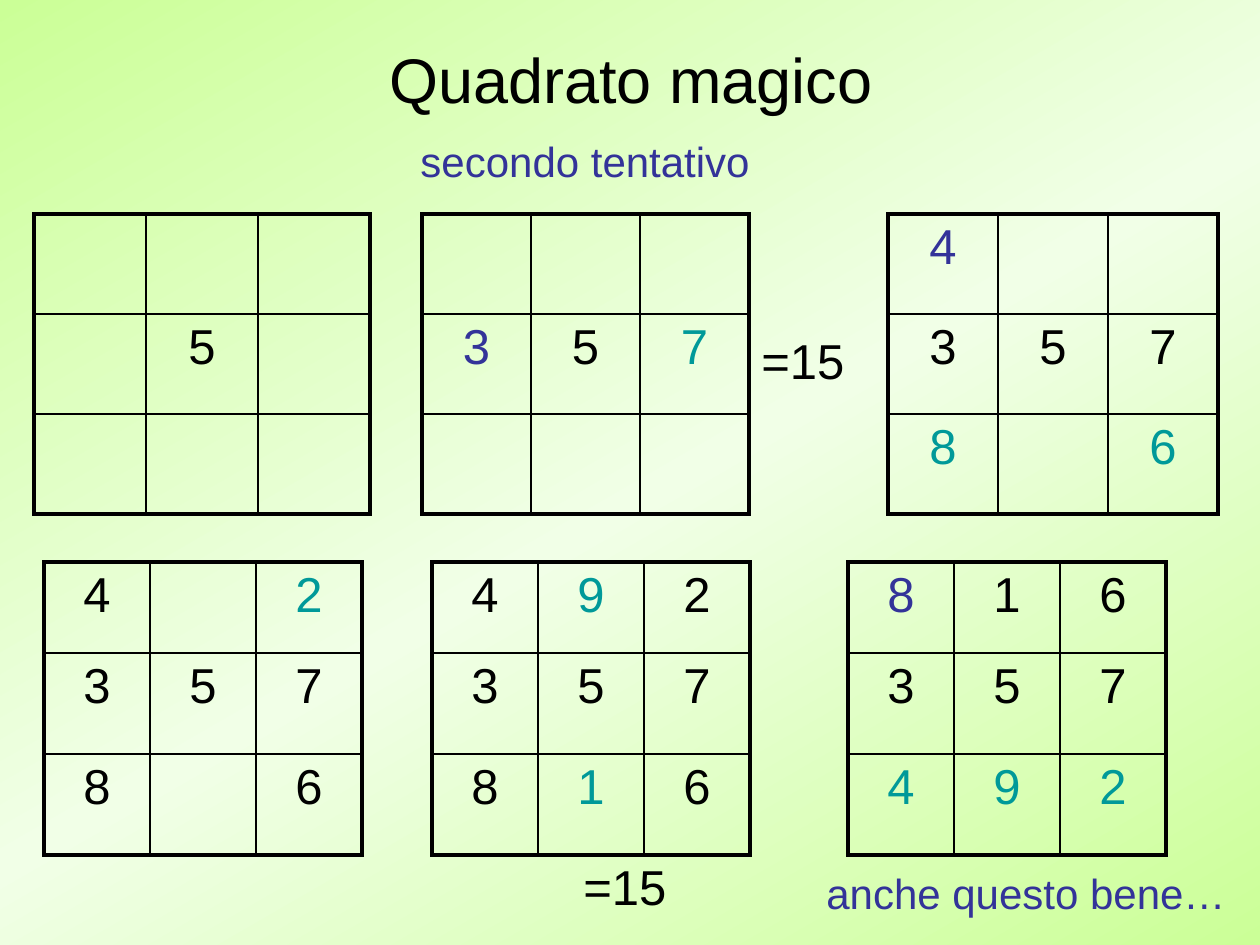
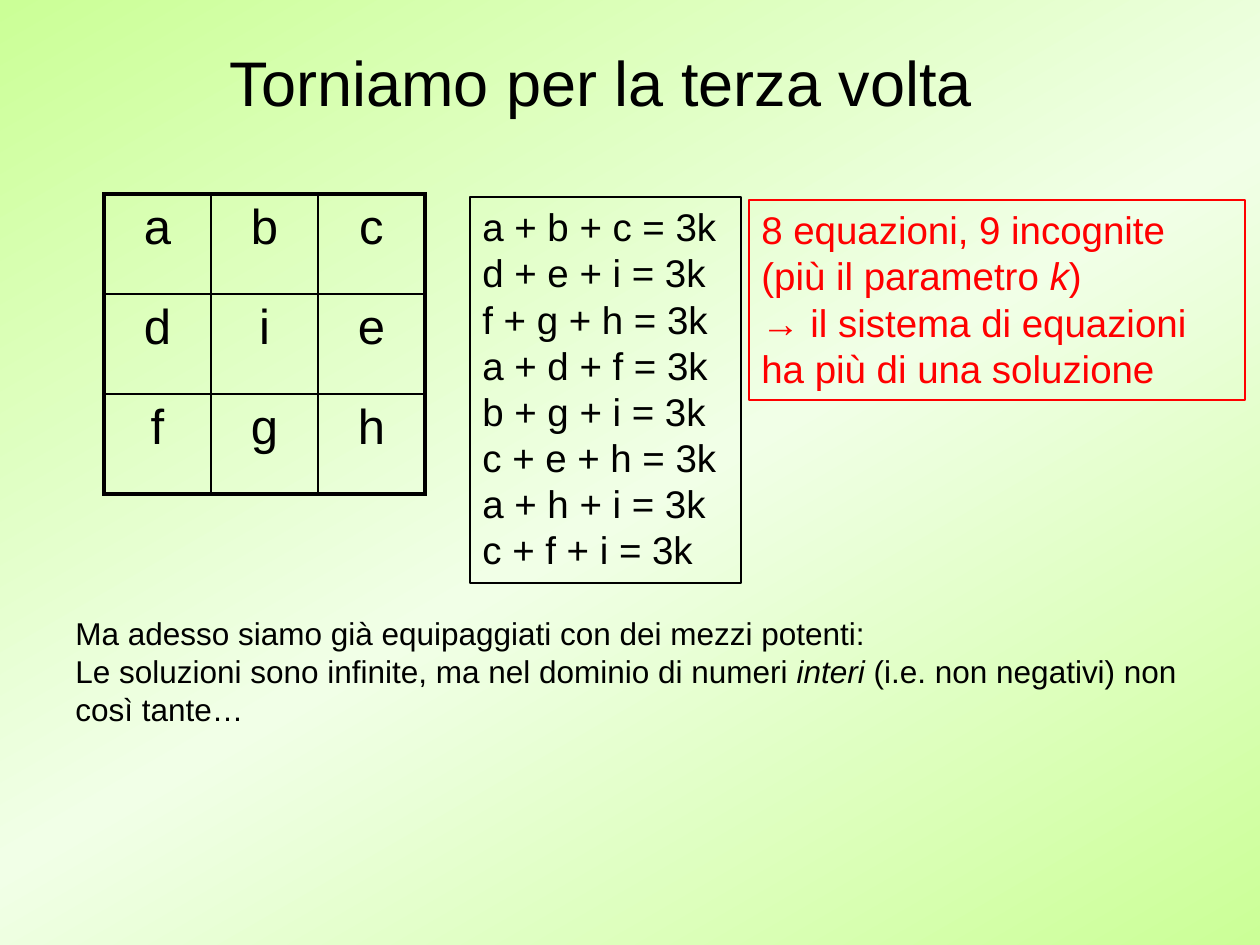
from copy import deepcopy

from lxml.etree import SubElement
from pptx import Presentation
from pptx.dml.color import RGBColor
from pptx.enum.shapes import MSO_SHAPE
from pptx.enum.text import MSO_ANCHOR, MSO_AUTO_SIZE, PP_ALIGN
from pptx.oxml.ns import qn
from pptx.util import Emu, Pt

SCALE = 914400 / 126
WIDTH, HEIGHT = 1260, 945
FONT = "Arial"
LIME = RGBColor(0xCB, 0xFF, 0x97)
PALE = RGBColor(0xF1, 0xFF, 0xE7)
BLACK = RGBColor(0, 0, 0)
BLUE = RGBColor(0x33, 0x33, 0x99)
TEAL = RGBColor(0, 0x99, 0x99)
RED = RGBColor(0xFF, 0, 0)
MARKS = {"b": BLUE, "t": TEAL}
THICK, THIN = Pt(2.25), Pt(1)
EVEN = (100, 100, 100)
SHORT = (91, 101, 101)


def px(count):
    return Emu(round(count * SCALE))


def place(shape, left, top, width, height):
    shape.left, shape.top = px(left), px(top)
    shape.width, shape.height = px(width), px(height)


def paint_back(master):
    fill = master.background.fill
    fill.gradient()
    fill.gradient_angle = 120
    first = fill.gradient_stops[0]._gs
    first.addnext(deepcopy(first))
    looks = ((0, LIME), (0.48, PALE), (1, LIME))
    for stop, (spot, color) in zip(fill.gradient_stops, looks):
        stop.position = spot
        stop.color.rgb = color


def write(para, text, size, color):
    """Add the text run by run; parts between asterisks are italic."""
    for index, part in enumerate(text.split("*")):
        if part:
            run = para.add_run()
            run.text = part
            font = run.font
            font.name, font.size = FONT, Pt(size)
            font.italic = index % 2 == 1
            font.color.rgb = color


def add_page(deck, title, left, top):
    slide = deck.slides.add_slide(deck.slide_layouts[5])
    head = slide.shapes.title
    place(head, left, top, 1134, 157)
    frame = head.text_frame
    frame.auto_size = MSO_AUTO_SIZE.NONE
    frame.vertical_anchor = MSO_ANCHOR.MIDDLE
    para = frame.paragraphs[0]
    para.alignment = PP_ALIGN.CENTER
    write(para, title, 36, BLACK)
    return slide


def add_text(slide, area, lines, size, color=BLACK, wrap=False, framed=False):
    if framed:
        box = slide.shapes.add_shape(MSO_SHAPE.RECTANGLE, *map(px, area))
        box.shadow.inherit = False
        box.fill.background()
        box.line.color.rgb = color
        box.line.width = Pt(0.75)
    else:
        box = slide.shapes.add_textbox(*map(px, area))
    frame = box.text_frame
    frame.word_wrap = wrap
    frame.auto_size = MSO_AUTO_SIZE.SHAPE_TO_FIT_TEXT
    frame.vertical_anchor = MSO_ANCHOR.TOP
    for index, line in enumerate(lines):
        para = frame.add_paragraph() if index else frame.paragraphs[0]
        para.alignment = PP_ALIGN.LEFT
        write(para, line, size, color)


def edge_cell(cell, row, col):
    """Draw thick borders on the rim of the square and thin ones inside."""
    props = cell._tc.get_or_add_tcPr()
    rims = {"L": col == 0, "R": col == 2, "T": row == 0, "B": row == 2}
    for index, (side, rim) in enumerate(rims.items()):
        line = SubElement(props, qn("a:ln" + side), w=str(THICK if rim else THIN))
        fill = SubElement(line, qn("a:solidFill"))
        SubElement(fill, qn("a:srgbClr"), val=str(BLACK))
        props.insert(index, line)


def add_square(slide, left, top, side, rows, heights=EVEN):
    """Each row lists its cells: a dot is empty, a second letter marks a colour."""
    area = (left, top, 3 * side, sum(heights))
    table = slide.shapes.add_table(3, 3, *map(px, area)).table
    table.first_row = table.horz_banding = False
    for column in table.columns:
        column.width = px(side)
    for r, (cells, height) in enumerate(zip(rows, heights)):
        table.rows[r].height = px(height)
        for c, mark in enumerate(cells.split()):
            cell = table.cell(r, c)
            cell.fill.background()
            edge_cell(cell, r, c)
            if mark != ".":
                para = cell.text_frame.paragraphs[0]
                para.alignment = PP_ALIGN.CENTER
                para.space_before = Pt(5.6)
                write(para, mark[0], 28, MARKS.get(mark[1:], BLACK))


def build_tries(deck):
    slide = add_page(deck, "Quadrato magico", 64, 0)
    blank = ". . ."
    upper = (
        (34, 112, (blank, ". 5 .", blank)),
        (422, 109, (blank, "3b 5 7t", blank)),
        (888, 110, ("4b . .", "3 5 7", "8t . 6t")),
    )
    lower = (
        (44, ("4 . 2t", "3 5 7", "8 . 6")),
        (432, ("4 9t 2", "3 5 7", "8 1t 6")),
        (848, ("8b 1 6", "3 5 7", "4t 9t 2t")),
    )
    for left, side, rows in upper:
        add_square(slide, left, 214, side, rows)
    for left, rows in lower:
        add_square(slide, left, 562, 106, rows, SHORT)
    for left, top in ((749, 324), (571, 850)):
        add_text(slide, (left, top, 108, 72), ["=15"], 28)
    add_text(slide, (814, 861, 428, 63), ["anche questo bene…"], 24, BLUE)
    add_text(slide, (408, 129, 358, 63), ["secondo tentativo"], 24, BLUE)


def build_system(deck):
    slide = add_page(deck, "Torniamo per la terza volta", 34, 3)
    add_square(slide, 104, 194, 107, ("a b c", "d i e", "f g h"))
    sums = ("abc", "dei", "fgh", "adf", "bgi", "ceh", "ahi", "cfi")
    lines = [" + ".join(names) + " = 3k" for names in sums]
    add_text(slide, (470, 197, 271, 386), lines, 22, framed=True)
    add_text(slide, (749, 200, 496, 200), (
        "8 equazioni, 9 incognite (più il parametro *k*)",
        "→ il sistema di equazioni",
        "ha più di una soluzione",
    ), 22, RED, wrap=True, framed=True)
    add_text(slide, (63, 608, 1134, 127), (
        "Ma adesso siamo già equipaggiati con dei mezzi potenti:",
        "Le soluzioni sono infinite, ma nel dominio di numeri *interi*"
        " (i.e. non negativi) non così tante…",
    ), 18, wrap=True)


def main():
    deck = Presentation()
    deck.slide_width, deck.slide_height = px(WIDTH), px(HEIGHT)
    paint_back(deck.slide_master)
    build_tries(deck)
    build_system(deck)
    deck.save("out.pptx")


if __name__ == "__main__":
    main()
